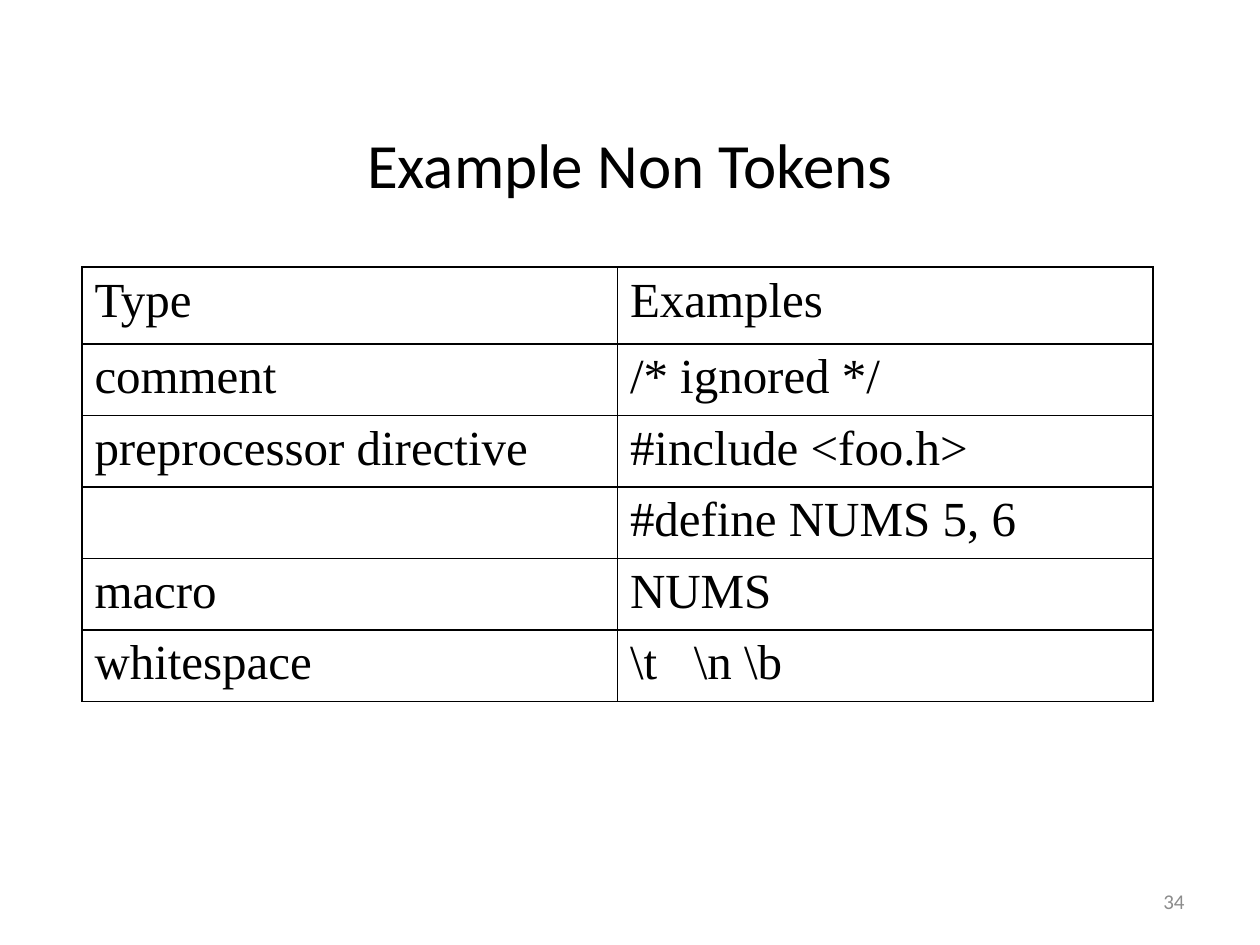
from dataclasses import dataclass

from lxml import etree
from pptx import Presentation
from pptx.dml.color import RGBColor
from pptx.enum import text
from pptx.oxml import ns
from pptx.util import Inches, Pt

HUES = {"ink": "000000", "page": "FFFFFF", "grey": "8C8C8C"}


@dataclass
class Font:
    name: str
    size: int
    hue: str = "ink"


@dataclass
class Label:
    words: str
    box: tuple[float, float, float, float]
    font: Font
    align: text.PP_ALIGN


LABELS = [
    Label("Example Non Tokens", (0.75, 0.67, 8.5, 1.25),
          Font("Calibri", 36), text.PP_ALIGN.CENTER),
    Label("34", (7.17, 6.95, 2.33, 0.4),
          Font("Calibri", 12, "grey"), text.PP_ALIGN.RIGHT),
]
ROWS = [
    ("Type", "Examples"),
    ("comment", "/* ignored */"),
    ("preprocessor directive", "#include <foo.h>"),
    ("", "#define NUMS 5, 6"),
    ("macro", "NUMS"),
    ("whitespace", "\\t   \\n \\b"),
]
BODY = Font("Times New Roman", 28)
WIDE = 4.25
HEAD, TALL = 0.61, 0.56


def add_run(para, words: str, font: Font) -> None:
    run = para.add_run()
    run.text = words
    run.font.name = font.name
    run.font.size = Pt(font.size)
    run.font.color.rgb = RGBColor.from_string(HUES[font.hue])


def add_label(slide, label: Label) -> None:
    frame = slide.shapes.add_textbox(*map(Inches, label.box)).text_frame
    frame.word_wrap = True
    frame.vertical_anchor = text.MSO_ANCHOR.MIDDLE
    para = frame.paragraphs[0]
    para.alignment = label.align
    add_run(para, label.words, label.font)


def add_edges(cell) -> None:
    props = cell._tc.get_or_add_tcPr()
    for spot, side in enumerate(("lnL", "lnR", "lnT", "lnB")):
        line = etree.Element(ns.qn(f"a:{side}"), w=str(Pt(1)))
        fill = etree.SubElement(line, ns.qn("a:solidFill"))
        etree.SubElement(fill, ns.qn("a:srgbClr"), val=HUES["ink"])
        props.insert(spot, line)


def add_grid(slide) -> None:
    high = HEAD + TALL * (len(ROWS) - 1)
    table = slide.shapes.add_table(
        len(ROWS), 2, Inches(0.65), Inches(2.12),
        Inches(2 * WIDE), Inches(high)).table
    table.first_row = False
    table.horz_banding = False
    for col in table.columns:
        col.width = Inches(WIDE)
    for r, row in enumerate(ROWS):
        table.rows[r].height = Inches(TALL if r else HEAD)
        for c, words in enumerate(row):
            cell = table.cell(r, c)
            cell.fill.solid()
            cell.fill.fore_color.rgb = RGBColor.from_string(HUES["page"])
            add_edges(cell)
            if words:
                add_run(cell.text_frame.paragraphs[0], words, BODY)


def main() -> None:
    deck = Presentation()
    deck.slide_width, deck.slide_height = Inches(10), Inches(7.5)
    slide = deck.slides.add_slide(deck.slide_layouts[6])
    title, number = LABELS
    add_label(slide, title)
    add_grid(slide)
    add_label(slide, number)
    deck.save("out.pptx")


if __name__ == "__main__":
    main()
